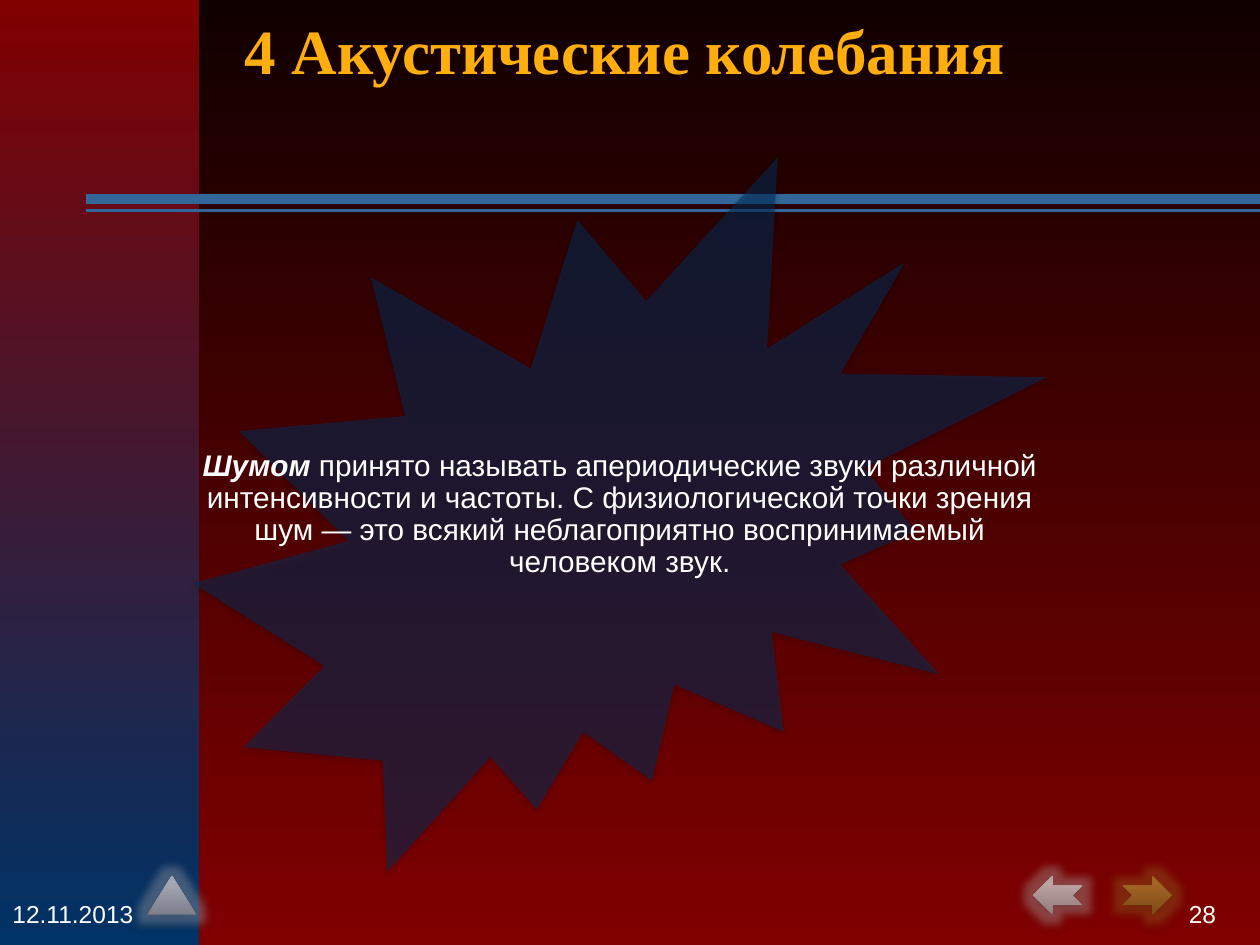
import copy
import pptx
import pptx.util
import pptx.dml.color
import pptx.enum.shapes
import pptx.enum.text
import pptx.oxml
import pptx.oxml.ns

Pt = pptx.util.Pt
rgb = pptx.dml.color.RGBColor.from_string
qn = pptx.oxml.ns.qn
kinds = pptx.enum.shapes.MSO_SHAPE
align = pptx.enum.text.PP_ALIGN
anchor = pptx.enum.text.MSO_ANCHOR
ns = pptx.oxml.ns.nsdecls("a")


def shade(fill, root, angle, stops):
    fill.gradient()
    fill.gradient_angle = 360 - angle
    items = root.find(".//" + qn("a:gsLst"))
    while len(items) < len(stops):
        items.append(copy.deepcopy(items[-1]))
    for stop, (place, color) in zip(fill.gradient_stops, stops):
        stop.position = place
        stop.color.rgb = rgb(color)


def write(frame, runs, size, font, color, side, spacing=1.0):
    frame.word_wrap = True
    par = frame.paragraphs[0]
    par.alignment = side
    par.line_spacing = spacing
    for text, bold, italic in runs:
        run = par.add_run()
        run.text = text
        run.font.name = font
        run.font.size = Pt(size)
        run.font.bold = bold
        run.font.italic = italic
        run.font.color.rgb = rgb(color)


deck = pptx.Presentation()
deck.slide_width, deck.slide_height = Pt(720), Pt(540)
slide = deck.slides.add_slide(deck.slide_layouts[5])
shapes = slide.shapes
back = slide.background.fill
shade(back, slide.element, 90, [(0, "100000"), (1, "800000")])

band = shapes.add_shape(kinds.RECTANGLE, 0, 0, Pt(113.76), Pt(540))
band.shadow.inherit = False
band.line.fill.background()
shade(band.fill, band.element, 90, [(0, "800000"), (1, "003366")])

for top, width in [(120.24, 2), (113.76, 6)]:
    rule = shapes.add_connector(
        pptx.enum.shapes.MSO_CONNECTOR.STRAIGHT, Pt(49), Pt(top), Pt(720), Pt(top))
    rule.line.color.rgb = rgb("336699")
    rule.line.width = Pt(width)
    rule.element.spPr.append(pptx.oxml.parse_xml(f"<a:effectLst {ns}/>"))

title = shapes.title
title.left, title.top, title.width, title.height = Pt(33.84), Pt(28), Pt(646.56), Pt(67.68)
frame = title.text_frame
frame.auto_size = pptx.enum.text.MSO_AUTO_SIZE.NONE
frame.vertical_anchor = anchor.BOTTOM
frame.margin_bottom = Pt(46)
write(frame, [("4 Акустические колебания", True, False)],
      36, "Times New Roman", "FFAE0D", align.CENTER, 0.8)

place = Pt(110.16), Pt(90), Pt(488.16), Pt(408.24)
burst = shapes.add_shape(kinds.EXPLOSION2, *place)
burst.line.fill.background()
burst.fill.solid()
burst.fill.fore_color.rgb = rgb("002E5D")
tint = burst.element.spPr.find(".//" + qn("a:srgbClr"))
tint.append(pptx.oxml.parse_xml(f'<a:alpha {ns} val="50000"/>'))

note = shapes.add_textbox(*place).text_frame
note.vertical_anchor = anchor.MIDDLE
note.margin_left = note.margin_right = note.margin_top = note.margin_bottom = 0
write(note, [
    ("Шумом ", True, True),
    ("принято называть апериодические звуки различной интенсивности и частоты. "
     "С физиологической точки зрения шум — это всякий неблагоприятно "
     "воспринимаемый человеком звук.", False, False),
], 17, "Arial", "FFFFFF", align.CENTER, 0.9)

for left, text, side in [(0, "12.11.2013", align.LEFT), (552.24, "28", align.RIGHT)]:
    foot = shapes.add_textbox(Pt(left), Pt(504), Pt(149.76), Pt(36)).text_frame
    foot.vertical_anchor = anchor.MIDDLE
    write(foot, [(text, False, False)], 14, "Arial", "FFFFFF", side)

glows = [(burst, 1.6, 38, None)]
for left, kind, flip, colors in [
    (590.4, kinds.NOTCHED_RIGHT_ARROW, True, ("927C7C", "BDA2A2", "BFA2A2")),
    (84.24, kinds.FLOWCHART_EXTRACT, False, ("7D808B", "A3A6B4", "A3A7B6")),
    (641.52, kinds.NOTCHED_RIGHT_ARROW, False, ("7E4C1B", "A36323", "A66320")),
]:
    icon = shapes.add_shape(kind, Pt(left), Pt(500.4), Pt(28), Pt(22.32))
    icon.line.fill.background()
    shade(icon.fill, icon.element, 270, list(zip((0, 0.8, 1), colors)))
    if flip:
        icon.element.spPr.find(qn("a:xfrm")).set("flipH", "1")
    glows.append((icon, 1.8, 35, colors[2]))

for shape, drop, alpha, color in glows:
    shape.shadow.inherit = False
    effects = shape.element.spPr.find(qn("a:effectLst"))
    if color:
        effects.append(pptx.oxml.parse_xml(
            f'<a:glow {ns} rad="{Pt(10)}"><a:srgbClr val="{color}">'
            '<a:alpha val="40000"/></a:srgbClr></a:glow>'))
    effects.append(pptx.oxml.parse_xml(
        f'<a:outerShdw {ns} blurRad="{Pt(3.1)}" dist="{Pt(drop)}" dir="5400000" '
        f'rotWithShape="0"><a:srgbClr val="000000"><a:alpha val="{alpha * 1000}"/>'
        '</a:srgbClr></a:outerShdw>'))

deck.save("out.pptx")
